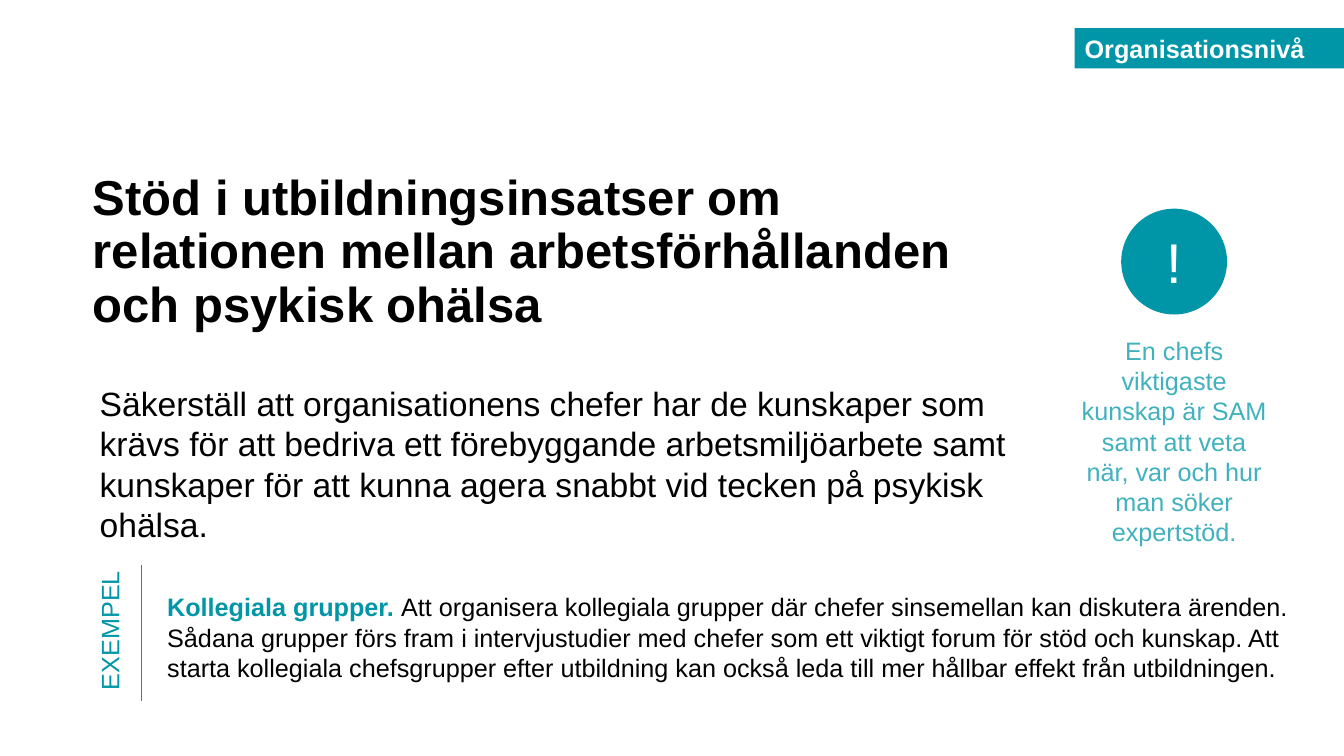
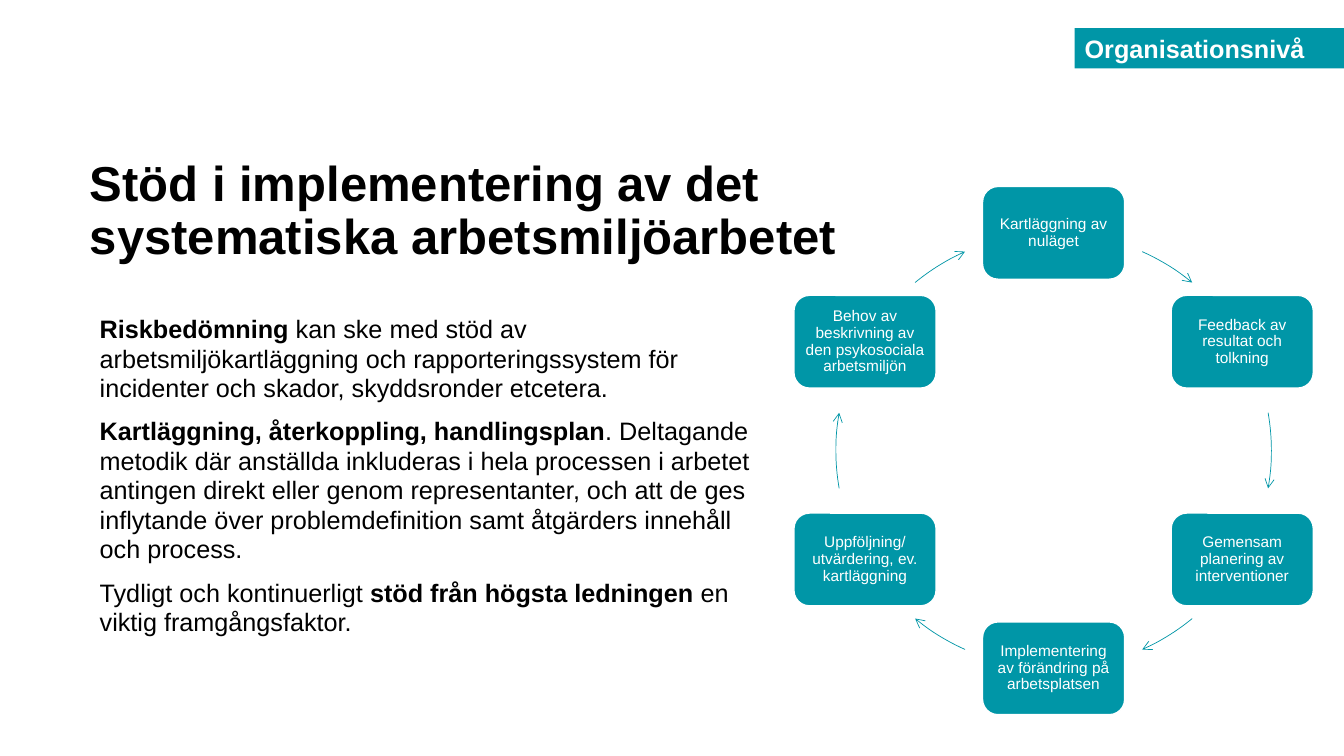
"""Build two slides on support at the organisation level."""
from dataclasses import dataclass
from math import cos, radians, sin

from lxml.etree import SubElement
from pptx import Presentation
from pptx.dml.color import RGBColor
from pptx.enum.shapes import MSO_CONNECTOR, MSO_SHAPE
from pptx.enum.text import MSO_ANCHOR, PP_ALIGN
from pptx.oxml.ns import qn
from pptx.util import Inches, Pt


@dataclass(frozen=True)
class Theme:
    font: str = "Arial"
    teal: str = "0096A7"
    pale: str = "40B1BD"
    black: str = "000000"
    white: str = "FFFFFF"
    head: int = 35
    lead: int = 24
    text: int = 18
    mark: int = 40
    step: int = 11
    hair: float = 0.5


THEME = Theme()


def tint(code):
    return RGBColor.from_string(code)


def put(shape, *paras, size=THEME.text, color=THEME.black, accent=None,
        bold=False, align=PP_ALIGN.LEFT, anchor=MSO_ANCHOR.TOP,
        inset=None, lead=None, gap=0):
    frame = shape.text_frame
    frame.word_wrap = True
    frame.vertical_anchor = anchor
    if inset is not None:
        frame.margin_left = frame.margin_right = Inches(inset)
        frame.margin_top = frame.margin_bottom = Inches(inset)
    for i, para in enumerate(paras):
        p = frame.add_paragraph() if i else frame.paragraphs[0]
        p.alignment = align
        if lead:
            p.line_spacing = lead
        if i and gap:
            p.space_before = Pt(gap)
        for j, part in enumerate(para.split("**")):
            strong = j % 2 == 1
            for k, line in enumerate(part.split("\n")):
                if k:
                    p.add_line_break()
                if not line:
                    continue
                run = p.add_run()
                run.text = line
                font = run.font
                font.name, font.size = THEME.font, Pt(size)
                font.bold = bold or strong
                font.color.rgb = tint(accent if strong and accent else color)


class Deck:
    def __init__(self):
        self.file = Presentation()
        self.file.slide_width = Inches(13.33)
        self.file.slide_height = Inches(7.5)
        self.slide = None

    def start(self, title, top, left):
        self.slide = self.file.slides.add_slide(self.file.slide_layouts[6])
        self.text(left, top, 8.72, 1.6, title, size=THEME.head, bold=True,
                  inset=0, lead=Pt(38))
        self.shape(MSO_SHAPE.RECTANGLE, 10.66, 0.28, 2.67, 0.4,
                   "Organisationsnivå", color=THEME.white, bold=True)

    def text(self, x, y, w, h, *paras, turn=0, **form):
        box = self.slide.shapes.add_textbox(
            Inches(x), Inches(y), Inches(w), Inches(h))
        box.rotation = turn
        put(box, *paras, **form)

    def shape(self, kind, x, y, w, h, *paras, edge=None, **form):
        shape = self.slide.shapes.add_shape(
            kind, Inches(x), Inches(y), Inches(w), Inches(h))
        shape.shadow.inherit = False
        shape.fill.solid()
        shape.fill.fore_color.rgb = tint(THEME.teal)
        if edge:
            shape.line.color.rgb = tint(edge)
            shape.line.width = Pt(1)
        else:
            shape.line.fill.background()
        put(shape, *paras, **form)

    def rule(self, x, top, end):
        line = self.slide.shapes.add_connector(
            MSO_CONNECTOR.STRAIGHT, Inches(x), Inches(top),
            Inches(x), Inches(end))
        line.line.color.rgb = tint(THEME.teal)
        line.line.width = Pt(THEME.hair)
        SubElement(line._element.spPr, qn("a:effectLst"))

    def arc(self, x, y, size, start, end):
        arc = self.slide.shapes.add_shape(
            MSO_SHAPE.ARC, Inches(x), Inches(y), Inches(size), Inches(size))
        for i, angle in enumerate((start, end)):
            arc.adjustments[i] = (angle - 90) % 360 * 0.6
        arc.fill.background()
        arc.line.color.rgb = tint(THEME.teal)
        arc.line.width = Pt(THEME.hair)
        SubElement(arc.line._get_or_add_ln(), qn("a:tailEnd"), type="arrow")
        arc.shadow.inherit = False

    def ring(self, x, y, radius, steps):
        w, h = 1.41, 0.92
        spans = ((24, 39.5), (80, 100), (140.5, 156))
        for i, step in enumerate(steps):
            angle = radians(360 / len(steps) * i)
            self.shape(MSO_SHAPE.ROUNDED_RECTANGLE,
                       x + radius * sin(angle) - w / 2,
                       y - radius * cos(angle) - h / 2, w, h, step,
                       edge=THEME.white, size=THEME.step, color=THEME.white,
                       align=PP_ALIGN.CENTER, anchor=MSO_ANCHOR.MIDDLE,
                       inset=0.05, lead=0.9)
            turn = i // len(spans) * 180
            start, end = spans[i % len(spans)]
            self.arc(x - radius, y - radius, radius * 2,
                     start + turn, end + turn)


def train(deck):
    deck.start("Stöd i utbildningsinsatser om relationen mellan "
               "arbetsförhållanden och psykisk ohälsa", 1.71, 0.92)
    deck.text(0.89, 3.75, 9.25, 1.87,
              "Säkerställ att organisationens chefer har de kunskaper som "
              "krävs för att bedriva ett förebyggande arbetsmiljöarbete samt "
              "kunskaper för att kunna agera snabbt vid tecken på psykisk "
              "ohälsa.", size=THEME.lead)
    mid = {"align": PP_ALIGN.CENTER, "anchor": MSO_ANCHOR.MIDDLE}
    deck.text(10.6, 3.25, 2.09, 2.25,
              "En chefs viktigaste kunskap är SAM samt att veta när, var och "
              "hur man söker expertstöd.", color=THEME.pale, **mid)
    deck.shape(MSO_SHAPE.OVAL, 11.12, 2.07, 1.05, 1.05, "!",
               size=THEME.mark, color=THEME.white, **mid)
    deck.text(1.56, 5.82, 11.52, 1.01,
              "**Kollegiala grupper. **Att organisera kollegiala grupper där "
              "chefer sinsemellan kan diskutera ärenden. Sådana grupper förs "
              "fram i intervjustudier med chefer som ett viktigt forum för "
              "stöd och kunskap. Att starta kollegiala chefsgrupper efter "
              "utbildning kan också leda till mer hållbar effekt från "
              "utbildningen.", accent=THEME.teal)
    deck.text(0.3, 5.96, 1.57, 0.4, "EXEMPEL", turn=270, color=THEME.teal)
    deck.rule(1.4, 5.61, 6.95)


def cycle(deck):
    deck.start("Stöd i implementering av det systematiska "
               "arbetsmiljöarbetet", 1.57, 0.89)
    deck.text(0.89, 3.07, 6.72, 3.74,
              "**Riskbedömning** kan ske med stöd av arbetsmiljökartläggning "
              "och rapporteringssystem för incidenter och skador, "
              "skyddsronder etcetera.",
              "**Kartläggning, återkoppling, handlingsplan**. Deltagande "
              "metodik där anställda inkluderas i hela processen i arbetet "
              "antingen direkt eller genom representanter, och att de ges "
              "inflytande över problemdefinition samt åtgärders innehåll och "
              "process.",
              "Tydligt och kontinuerligt **stöd från högsta ledningen **en "
              "viktig framgångsfaktor.", lead=Pt(21), gap=10)
    deck.ring(10.45, 4.47, 2.16, (
        "Kartläggning av nuläget",
        "Feedback av resultat och tolkning",
        "Gemensam planering av interventioner",
        "Implementering av förändring på arbetsplatsen",
        "Uppföljning/\nutvärdering, ev. kartläggning",
        "Behov av beskrivning av den psykosociala arbetsmiljön"))


def main():
    deck = Deck()
    train(deck)
    cycle(deck)
    deck.file.save("out.pptx")


if __name__ == "__main__":
    main()
